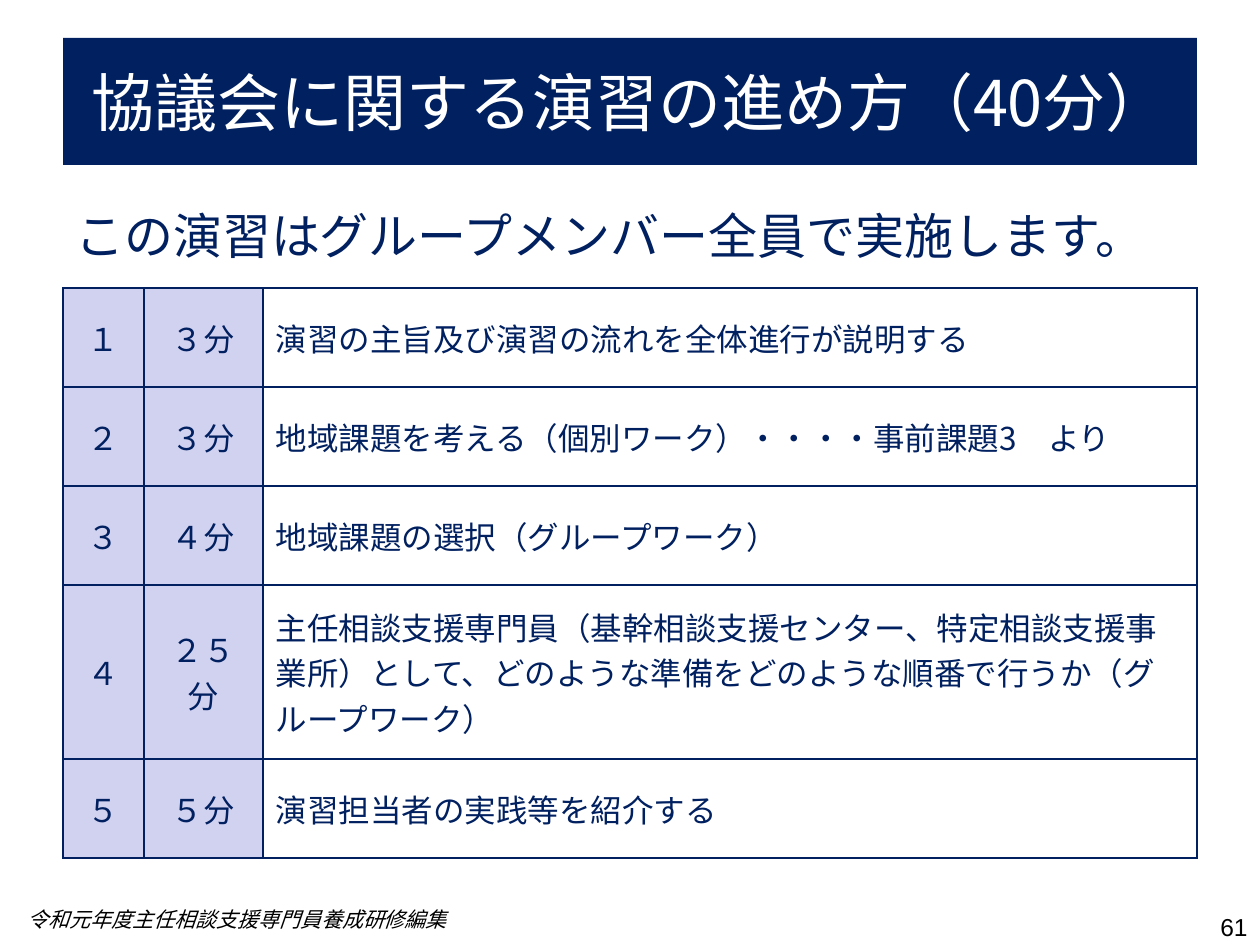
from dataclasses import dataclass

from lxml import etree
from pptx import Presentation
from pptx.dml.color import RGBColor
from pptx.enum.text import MSO_ANCHOR, MSO_AUTO_SIZE, PP_ALIGN
from pptx.oxml.ns import qn
from pptx.util import Emu, Pt

PX = 914400 / 126
TITLE_ONLY = 5
LEFT, MID, RIGHT = PP_ALIGN.LEFT, PP_ALIGN.CENTER, PP_ALIGN.RIGHT
MIDDLE = MSO_ANCHOR.MIDDLE
NO_FIT = MSO_AUTO_SIZE.NONE


@dataclass(frozen=True)
class Theme:
    navy: str = "002060"
    lilac: str = "D1D1F0"
    white: str = "FFFFFF"
    black: str = "000000"
    font: str = "Noto Sans CJK JP"
    digits: str = "Arial"
    title: int = 36
    lead: int = 28
    cell: int = 18
    page: int = 14
    note: int = 12
    line: int = 1


THEME = Theme()

STEPS = [
    ("１", "３分", "演習の主旨及び演習の流れを全体進行が説明する"),
    ("２", "３分", "地域課題を考える（個別ワーク）・・・・事前課題3　より"),
    ("３", "４分", "地域課題の選択（グループワーク）"),
    ("４", "２５分", "主任相談支援専門員（基幹相談支援センター、特定相談支援事業所）"
     "として、どのような準備をどのような順番で行うか（グループワーク）"),
    ("５", "５分", "演習担当者の実践等を紹介する"),
]
COLS = [81, 119, 934]
ROWS = [99, 99, 99, 174, 99]


def px(count):
    return Emu(round(count * PX))


def paint(fill, color):
    fill.solid()
    fill.fore_color.rgb = RGBColor.from_string(color)


def write(frame, text, size, color, align=LEFT, face=THEME.font, italic=False):
    """Fill a text frame with one paragraph in one style."""
    frame.word_wrap = True
    para = frame.paragraphs[0]
    para.text = text
    para.alignment = align
    font = para.font
    font.size = Pt(size)
    font.name = face
    font.italic = italic
    font.color.rgb = RGBColor.from_string(color)
    # East Asian glyphs take their face from a:ea
    props = para._p.pPr.find(qn("a:defRPr"))
    etree.SubElement(props, qn("a:ea"), typeface=face)


def add_title(slide, text, box):
    title = slide.shapes.title
    title.left, title.top, title.width, title.height = map(px, box)
    paint(title.fill, THEME.navy)
    frame = title.text_frame
    frame.auto_size = NO_FIT
    frame.vertical_anchor = MIDDLE
    write(frame, text, THEME.title, THEME.white, MID)


def add_label(slide, text, box, size, color, **style):
    label = slide.shapes.add_textbox(*map(px, box))
    write(label.text_frame, text, size, color, **style)


def rule_cell(cell):
    """Draw all four borders; they must come before the cell's fill."""
    props = cell._tc.get_or_add_tcPr()
    for spot, side in enumerate(("lnL", "lnR", "lnT", "lnB")):
        line = etree.Element(qn(f"a:{side}"), w=str(Pt(THEME.line)))
        fill = etree.SubElement(line, qn("a:solidFill"))
        etree.SubElement(fill, qn("a:srgbClr"), val=THEME.navy)
        props.insert(spot, line)


def add_steps(slide, left, top):
    shape = slide.shapes.add_table(
        len(ROWS), len(COLS), px(left), px(top), px(sum(COLS)), px(sum(ROWS)))
    table = shape.table
    table.first_row = table.horz_banding = False
    for col, width in zip(table.columns, COLS):
        col.width = px(width)
    for row, height, step in zip(table.rows, ROWS, STEPS):
        row.height = px(height)
        for spot, (cell, text) in enumerate(zip(row.cells, step)):
            is_task = spot == len(COLS) - 1
            cell.vertical_anchor = MIDDLE
            paint(cell.fill, THEME.white if is_task else THEME.lilac)
            rule_cell(cell)
            write(cell.text_frame, text, THEME.cell, THEME.navy,
                  LEFT if is_task else MID)


def main():
    deck = Presentation()
    deck.slide_width, deck.slide_height = px(1260), px(945)
    slide = deck.slides.add_slide(deck.slide_layouts[TITLE_ONLY])
    add_title(slide, "協議会に関する演習の進め方（40分）", (63, 38, 1134, 127))
    add_label(slide, "令和元年度主任相談支援専門員養成研修編集",
              (15, 900, 497, 38), THEME.note, THEME.black, italic=True)
    add_steps(slide, 63, 288)
    add_label(slide, "この演習はグループメンバー全員で実施します。",
              (63, 199, 1134, 72), THEME.lead, THEME.navy)
    add_label(slide, "61", (966, 906, 294, 37), THEME.page, THEME.black,
              align=RIGHT, face=THEME.digits)
    deck.save("out.pptx")


if __name__ == "__main__":
    main()
